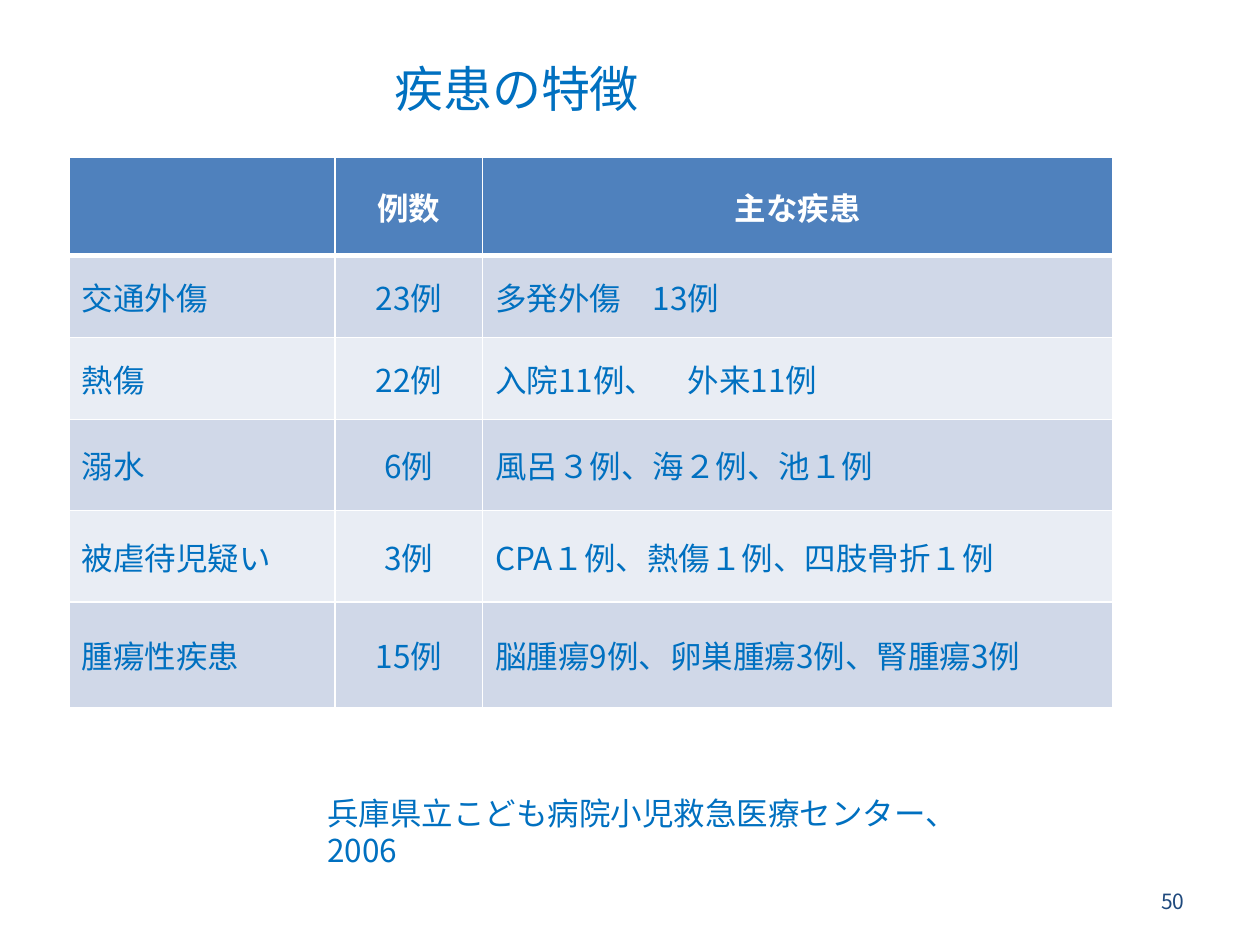
from dataclasses import dataclass

from lxml.etree import SubElement
from pptx import Presentation
from pptx.dml.color import RGBColor
from pptx.enum.text import MSO_ANCHOR, MSO_AUTO_SIZE, PP_ALIGN
from pptx.oxml.ns import qn
from pptx.slide import Slide
from pptx.table import _Cell
from pptx.text.text import TextFrame
from pptx.util import Emu, Pt

PX = 9144


@dataclass(frozen=True)
class Theme:
    font: str = "Noto Sans CJK JP"
    text: str = "0070C0"
    number: str = "1F497D"
    white: str = "FFFFFF"
    header: str = "4F81BD"
    bands: tuple[str, str] = ("D0D8E8", "E9EDF4")
    title_size: int = 28
    body_size: int = 18
    number_size: int = 12
    thin_line: int = 1
    thick_line: int = 3


@dataclass(frozen=True)
class TextStyle:
    size: int
    color: str
    alignment: PP_ALIGN = PP_ALIGN.LEFT
    bold: bool = False


@dataclass(frozen=True)
class Label:
    text: str
    left: int
    top: int
    width: int
    height: int
    style: TextStyle
    anchor: MSO_ANCHOR = MSO_ANCHOR.MIDDLE
    auto_size: MSO_AUTO_SIZE = MSO_AUTO_SIZE.NONE


@dataclass(frozen=True)
class DiseaseRow:
    category: str
    cases: str
    details: str
    height: int


THEME = Theme()
BODY = TextStyle(THEME.body_size, THEME.text)
BODY_CENTERED = TextStyle(THEME.body_size, THEME.text, PP_ALIGN.CENTER)
HEADER = TextStyle(THEME.body_size, THEME.white, PP_ALIGN.CENTER, True)

TITLE = Label("疾患の特徴", 117, 30, 586, 79,
              TextStyle(THEME.title_size, THEME.text, PP_ALIGN.CENTER))
SLIDE_NUMBER = Label("50", 717, 695, 233, 40,
                     TextStyle(THEME.number_size, THEME.number, PP_ALIGN.RIGHT))
CITATION = Label("兵庫県立こども病院小児救急医療センター、2006", 250, 625, 562, 40, BODY,
                 MSO_ANCHOR.TOP, MSO_AUTO_SIZE.SHAPE_TO_FIT_TEXT)

TABLE_LEFT, TABLE_TOP = 55, 125
COLUMN_WIDTHS = (211, 117, 500)
DISEASE_ROWS = (
    DiseaseRow("", "例数", "主な疾患", 78),
    DiseaseRow("交通外傷", "23例", "多発外傷　13例", 65),
    DiseaseRow("熱傷", "22例", "入院11例、　外来11例", 65),
    DiseaseRow("溺水", "6例", "風呂３例、海２例、池１例", 72),
    DiseaseRow("被虐待児疑い", "3例", "CPA１例、熱傷１例、四肢骨折１例", 73),
    DiseaseRow("腫瘍性疾患", "15例", "脳腫瘍9例、卵巣腫瘍3例、腎腫瘍3例", 84),
)


def px(length: int) -> Emu:
    return Emu(length * PX)


def write_text(text_frame: TextFrame, text: str, style: TextStyle) -> None:
    paragraph = text_frame.paragraphs[0]
    if text:
        paragraph.add_run().text = text
    paragraph.alignment = style.alignment
    font = paragraph.font
    font.size = Pt(style.size)
    font.bold = style.bold
    font.color.rgb = RGBColor.from_string(style.color)
    font.name = THEME.font
    properties = paragraph._p.pPr.find(qn("a:defRPr"))
    SubElement(properties, qn("a:ea"), typeface=THEME.font)


def draw_label(slide: Slide, label: Label) -> None:
    shape = slide.shapes.add_textbox(
        px(label.left), px(label.top), px(label.width), px(label.height))
    text_frame = shape.text_frame
    text_frame.word_wrap = True
    text_frame.auto_size = label.auto_size
    text_frame.vertical_anchor = label.anchor
    write_text(text_frame, label.text, label.style)


def draw_borders(cell: _Cell, row_index: int) -> None:
    widths = {"L": THEME.thin_line, "R": THEME.thin_line,
              "T": THEME.thick_line if row_index == 1 else THEME.thin_line,
              "B": THEME.thick_line if row_index == 0 else THEME.thin_line}
    properties = cell._tc.get_or_add_tcPr()
    for side, width in widths.items():
        line = SubElement(properties, qn(f"a:ln{side}"), w=str(Pt(width)))
        fill = SubElement(line, qn("a:solidFill"))
        SubElement(fill, qn("a:srgbClr"), val=THEME.white)


def draw_cell(cell: _Cell, text: str, style: TextStyle, row_index: int) -> None:
    draw_borders(cell, row_index)
    color = THEME.bands[(row_index - 1) % 2] if row_index else THEME.header
    cell.fill.solid()
    cell.fill.fore_color.rgb = RGBColor.from_string(color)
    cell.vertical_anchor = MSO_ANCHOR.MIDDLE
    write_text(cell.text_frame, text, style)


def draw_disease_table(slide: Slide) -> None:
    total_height = sum(row.height for row in DISEASE_ROWS)
    table = slide.shapes.add_table(
        len(DISEASE_ROWS), len(COLUMN_WIDTHS), px(TABLE_LEFT), px(TABLE_TOP),
        px(sum(COLUMN_WIDTHS)), px(total_height)).table
    for column, width in zip(table.columns, COLUMN_WIDTHS):
        column.width = px(width)
    for row_index, row in enumerate(DISEASE_ROWS):
        table.rows[row_index].height = px(row.height)
        texts = (row.category, row.cases, row.details)
        styles = (BODY, BODY_CENTERED, BODY) if row_index else (HEADER,) * 3
        for column_index, (text, style) in enumerate(zip(texts, styles)):
            draw_cell(table.cell(row_index, column_index), text, style, row_index)


def main() -> None:
    presentation = Presentation()
    presentation.slide_width = px(1000)
    presentation.slide_height = px(750)
    slide = presentation.slides.add_slide(presentation.slide_layouts[6])
    draw_label(slide, TITLE)
    draw_label(slide, SLIDE_NUMBER)
    draw_disease_table(slide)
    draw_label(slide, CITATION)
    presentation.save("out.pptx")


if __name__ == "__main__":
    main()
